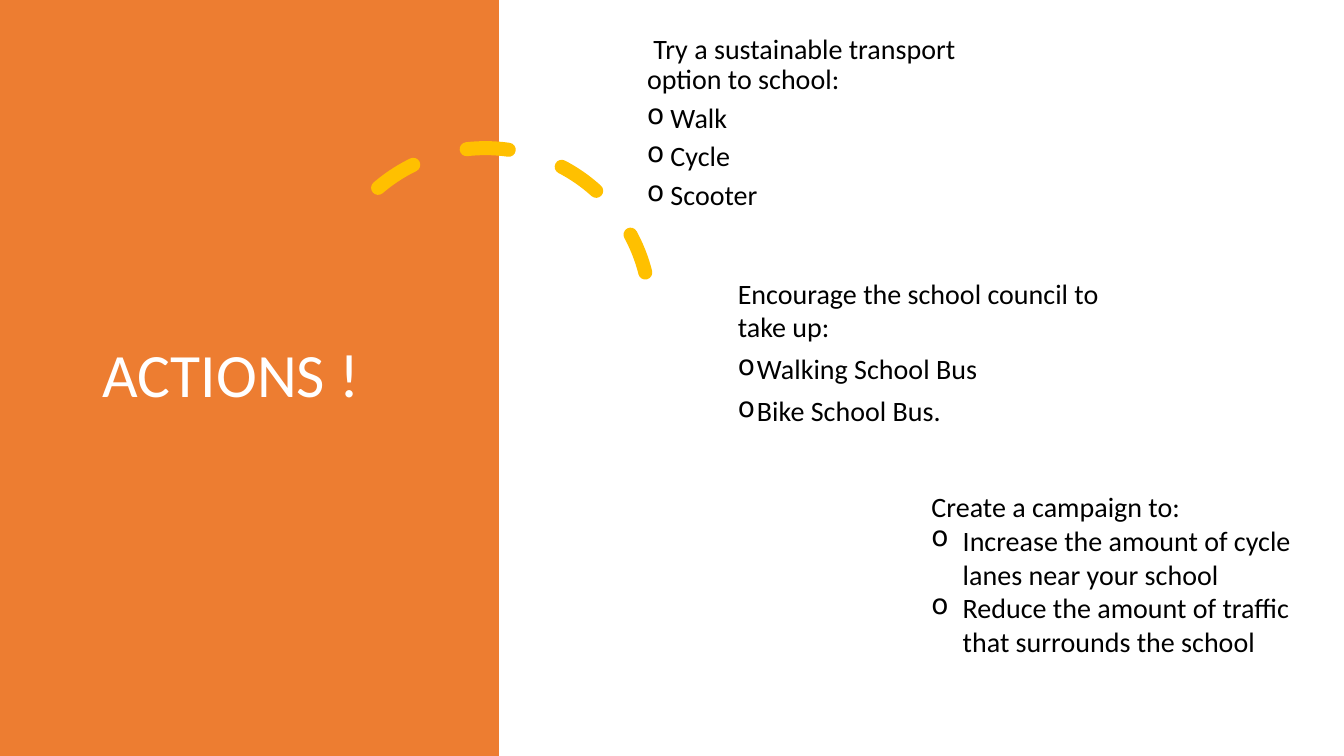
import pptx
import pptx.dml.color
import pptx.enum.dml
import pptx.enum.shapes
import pptx.enum.text
import pptx.oxml
import pptx.oxml.ns
import pptx.util

WIDTH = pptx.util.Inches(13.33)
HEIGHT = pptx.util.Inches(7.5)
FONT = "Calibri"
COLORS = {"panel": "ED7D31", "arc": "FFC000", "title": "FFFFFF", "text": "000000"}


def color(name):
    return pptx.dml.color.RGBColor.from_string(COLORS[name])


def place(left, top, width, height):
    """Turn percentages of the slide's size into lengths."""
    return [round(share * side / 100) for share, side in
            zip((left, top, width, height), (WIDTH, HEIGHT) * 2)]


def add_panel(page, area):
    panel = page.shapes.add_shape(pptx.enum.shapes.MSO_SHAPE.RECTANGLE, *place(*area))
    panel.shadow.inherit = False
    panel.fill.solid()
    panel.fill.fore_color.rgb = color("panel")
    panel.line.fill.background()


def add_dashed_arc(page, area, rotation, start):
    arc = page.shapes.add_shape(pptx.enum.shapes.MSO_SHAPE.ARC, *place(*area))
    arc.shadow.inherit = False
    arc.rotation = rotation
    arc.adjustments[0] = start
    arc.adjustments[1] = 0
    arc.fill.background()
    arc.line.color.rgb = color("arc")
    arc.line.width = pptx.util.Pt(10)
    arc.line.dash_style = pptx.enum.dml.MSO_LINE.DASH
    arc.line._get_or_add_ln().set("cap", "rnd")


def add_bullet(para, indent):
    properties = para._p.get_or_add_pPr()
    margin = pptx.util.Inches(indent)
    properties.set("marL", str(margin))
    properties.set("indent", str(-margin))
    bullet = pptx.oxml.parse_xml(
        f'<a:buChar {pptx.oxml.ns.nsdecls("a")} char="o"/>')
    properties.append(bullet)


def add_text(page, area, heading, items=(), indent=0, size=20, ink="text",
             spacing=1.0, after=0, grow=False, middle=False):
    """Add a heading with an optional bulleted list below it."""
    box = page.shapes.add_textbox(*place(*area))
    frame = box.text_frame
    frame.word_wrap = True
    if grow:
        frame.auto_size = pptx.enum.text.MSO_AUTO_SIZE.SHAPE_TO_FIT_TEXT
    if middle:
        frame.vertical_anchor = pptx.enum.text.MSO_ANCHOR.MIDDLE
    for index, words in enumerate((heading, *items)):
        para = frame.add_paragraph() if index else frame.paragraphs[0]
        para.text = words
        if index:
            add_bullet(para, indent)
        para.line_spacing = spacing
        para.space_after = pptx.util.Pt(after)
        para.font.name = FONT
        para.font.size = pptx.util.Pt(size)
        para.font.color.rgb = color(ink)


def main():
    deck = pptx.Presentation()
    deck.slide_width, deck.slide_height = WIDTH, HEIGHT
    page = deck.slides.add_slide(deck.slide_layouts[6])

    # Coloured side with the arc and the title
    add_panel(page, (0, 0, 37.13, 100))
    add_dashed_arc(page, (23.86, 19.6, 24.53, 43.6), rotation=345.8, start=146.13)
    add_text(page, (6.9, 9.33, 24.23, 81.2), "ACTIONS !", size=44, ink="title",
             spacing=0.9, middle=True)

    # Three actions, stepping down to the right
    add_text(page, (47.41, 4, 28.43, 14.53),
             " Try a sustainable transport option to school:",
             (" Walk", " Cycle", " Scooter"), spacing=0.9, after=6)
    add_text(page, (54.16, 35.87, 29.63, 21.6),
             "Encourage the school council to take up:",
             ("Walking School Bus", "Bike School Bus."),
             indent=0.19, after=6, grow=True)
    add_text(page, (68.57, 64.13, 30.38, 27.87),
             "Create a campaign to:",
             ("Increase the amount of cycle lanes near your school",
              "Reduce the amount of traffic that surrounds the school"),
             indent=0.31, grow=True)

    deck.save("out.pptx")


if __name__ == "__main__":
    main()
